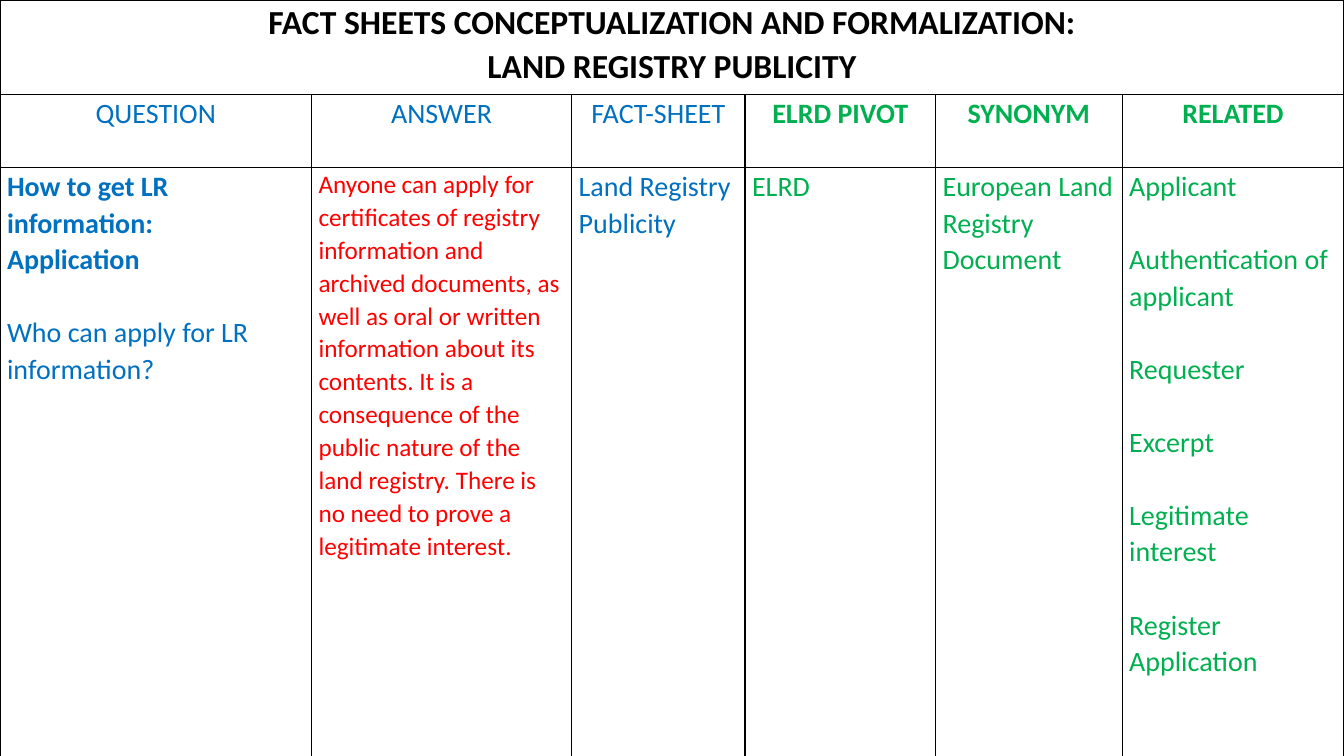
from lxml.etree import SubElement
from pptx import Presentation
from pptx.dml.color import RGBColor
from pptx.enum.text import PP_ALIGN as Align
from pptx.oxml.ns import qn
from pptx.util import Inches, Pt

BLACK, BLUE, GREEN, RED, WHITE = "000000", "0070C0", "00B050", "FF0000", "FFFFFF"
COLUMN_WIDTHS = [3.09, 2.58, 1.72, 1.89, 1.85, 2.2]
ROW_HEIGHTS = [0.94, 0.72, 5.85]
BLANK_LINE = 26

HEADINGS = [
    ("QUESTION", BLUE, False),
    ("ANSWER", BLUE, False),
    ("FACT-SHEET", BLUE, False),
    ("ELRD PIVOT", GREEN, True),
    ("SYNONYM", GREEN, True),
    ("RELATED", GREEN, True),
]
ANSWER = (
    "Anyone can apply for certificates of registry information and archived "
    "documents, as well as oral or written information about its contents. "
    "It is a consequence of the public nature of the land registry. "
    "There is no need to prove a legitimate interest."
)
RELATED_TERMS = [
    "Applicant",
    "Authentication of applicant",
    "Requester",
    "Excerpt",
    "Legitimate interest",
    "Register",
]


def color(value):
    return RGBColor.from_string(value)


def add_text(cell, text, size=20, fill=BLACK, bold=False, align=Align.LEFT, before=0):
    frame = cell.text_frame
    paragraph = frame.paragraphs[0]
    if paragraph.runs:
        paragraph = frame.add_paragraph()
    paragraph.alignment = align
    paragraph.line_spacing = 1.07
    paragraph.space_before = Pt(before)
    run = paragraph.add_run()
    run.text = text
    font = run.font
    font.name = "Calibri"
    font.size = Pt(size)
    font.bold = bold
    font.color.rgb = color(fill)


def add_borders(cell):
    properties = cell._tc.get_or_add_tcPr()
    for position, side in enumerate(("lnL", "lnR", "lnT", "lnB")):
        line = properties.makeelement(qn(f"a:{side}"), {"w": str(Pt(1))})
        solid = SubElement(line, qn("a:solidFill"))
        SubElement(solid, qn("a:srgbClr"), val=BLACK)
        properties.insert(position, line)


def format_cell(cell):
    cell.margin_left = cell.margin_right = Inches(0.07)
    cell.margin_top = cell.margin_bottom = 0
    cell.fill.solid()
    cell.fill.fore_color.rgb = color(WHITE)
    add_borders(cell)


def add_grid(slide):
    table = slide.shapes.add_table(
        len(ROW_HEIGHTS), len(COLUMN_WIDTHS), 0, 0, Inches(13.33), Inches(7.5)
    ).table
    table.first_row = table.horz_banding = False
    for column, width in zip(table.columns, COLUMN_WIDTHS):
        column.width = Inches(width)
    for row, height in zip(table.rows, ROW_HEIGHTS):
        row.height = Inches(height)
    for cell in table.iter_cells():
        format_cell(cell)
    table.cell(0, 0).merge(table.cell(0, len(COLUMN_WIDTHS) - 1))
    return table


def fill_headings(table):
    for text in (
        "FACT SHEETS CONCEPTUALIZATION AND FORMALIZATION:",
        "LAND REGISTRY PUBLICITY",
    ):
        add_text(table.cell(0, 0), text, size=24, bold=True, align=Align.CENTER)
    for column, (text, fill, bold) in enumerate(HEADINGS):
        add_text(table.cell(1, column), text, fill=fill, bold=bold, align=Align.CENTER)


def fill_facts(table):
    question, answer, fact_sheet, pivot, synonym, related = table.rows[2].cells
    add_text(question, "How to get LR information:", fill=BLUE, bold=True)
    add_text(question, "Application", fill=BLUE, bold=True)
    add_text(question, "Who can apply for LR information?", fill=BLUE, before=BLANK_LINE)
    add_text(answer, ANSWER, size=18, fill=RED)
    add_text(fact_sheet, "Land Registry Publicity", fill=BLUE)
    add_text(pivot, "ELRD", fill=GREEN)
    add_text(synonym, "European Land Registry Document", fill=GREEN)
    for index, term in enumerate(RELATED_TERMS):
        add_text(related, term, fill=GREEN, before=BLANK_LINE if index else 0)
    add_text(related, "Application", fill=GREEN)


def main():
    presentation = Presentation()
    presentation.slide_width = Inches(13.33)
    presentation.slide_height = Inches(7.5)
    slide = presentation.slides.add_slide(presentation.slide_layouts[6])
    table = add_grid(slide)
    fill_headings(table)
    fill_facts(table)
    presentation.save("out.pptx")


if __name__ == "__main__":
    main()
